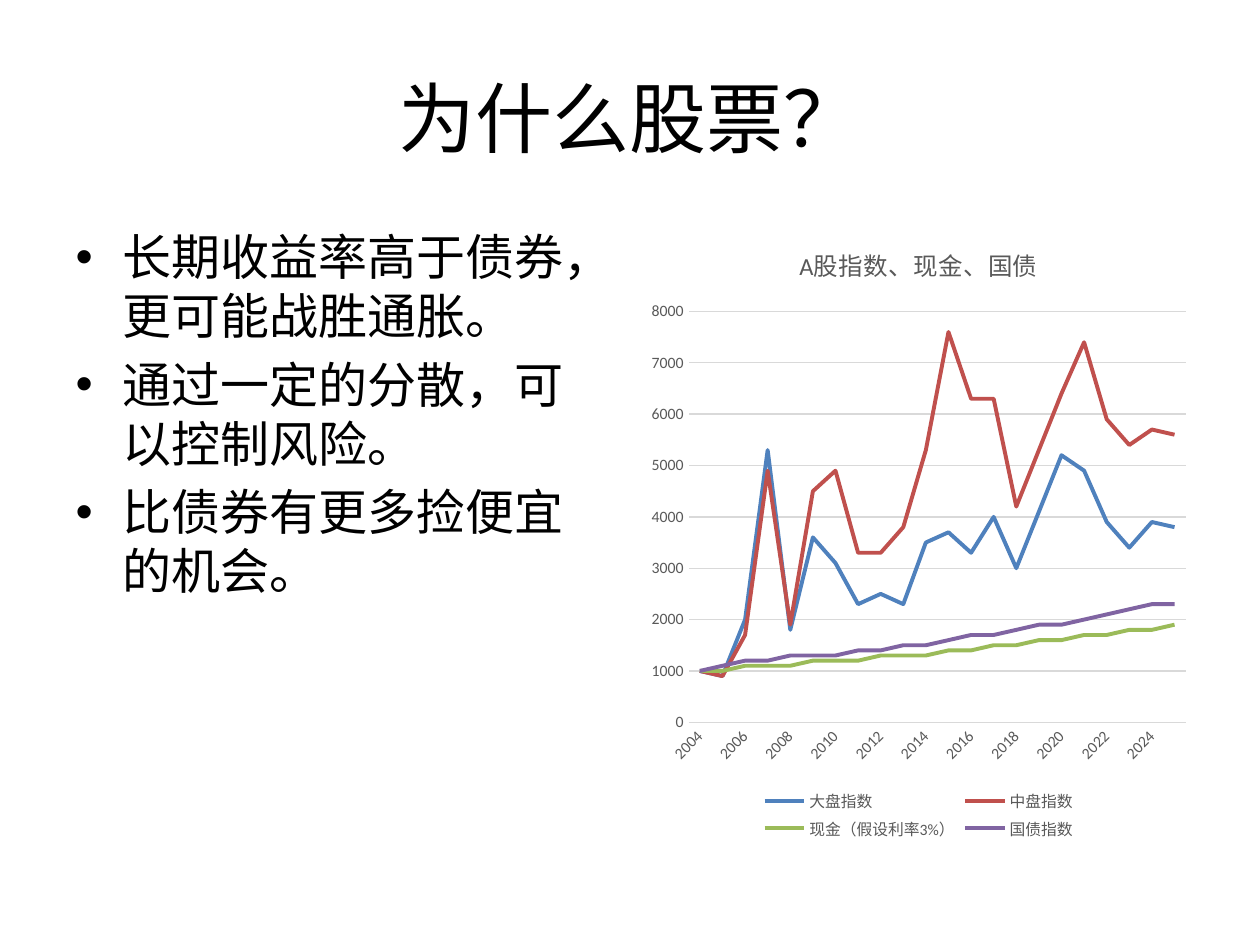
"""Build a slide on why to hold stocks, with a bullet list and an index chart."""
from lxml import etree
from pptx import Presentation
from pptx.chart.data import CategoryChartData
from pptx.dml.color import RGBColor
from pptx.enum.chart import XL_CHART_TYPE, XL_LEGEND_POSITION, XL_TICK_MARK
from pptx.enum.text import MSO_ANCHOR, PP_ALIGN
from pptx.oxml.ns import qn
from pptx.util import Pt

LINE_CHART = XL_CHART_TYPE.LINE
BOTTOM = XL_LEGEND_POSITION.BOTTOM
NO_TICK = XL_TICK_MARK.NONE
MIDDLE = MSO_ANCHOR.MIDDLE
CENTER = PP_ALIGN.CENTER

COLORS = {
    "text": "000000", "label": "595959", "grid": "D9D9D9",
    "blue": "4F81BD", "red": "C0504D", "green": "9BBB59", "purple": "8064A2",
}
POINTS = [
    "长期收益率高于债券，更可能战胜通胀。",
    "通过一定的分散，可以控制风险。",
    "比债券有更多捡便宜的机会。",
]
YEARS = [str(year) for year in range(2004, 2026)]
SERIES = [
    ("大盘指数", "blue",
     [1000, 900, 2000, 5300, 1800, 3600, 3100, 2300, 2500, 2300, 3500,
      3700, 3300, 4000, 3000, 4100, 5200, 4900, 3900, 3400, 3900, 3800]),
    ("中盘指数", "red",
     [1000, 900, 1700, 4900, 1900, 4500, 4900, 3300, 3300, 3800, 5300,
      7600, 6300, 6300, 4200, 5300, 6400, 7400, 5900, 5400, 5700, 5600]),
    ("现金（假设利率3%）", "green",
     [1000, 1000, 1100, 1100, 1100, 1200, 1200, 1200, 1300, 1300, 1300,
      1400, 1400, 1500, 1500, 1600, 1600, 1700, 1700, 1800, 1800, 1900]),
    ("国债指数", "purple",
     [1000, 1100, 1200, 1200, 1300, 1300, 1300, 1400, 1400, 1500, 1500,
      1600, 1700, 1700, 1800, 1900, 1900, 2000, 2100, 2200, 2300, 2300]),
]


class SlideBuilder:
    """Hold the style and the current page."""

    font_name = "Calibri"

    def __init__(self, page):
        self.page = page

    def style(self, font, size, color):
        font.name = self.font_name
        font.size = Pt(size)
        font.bold = False
        font.color.rgb = RGBColor.from_string(COLORS[color])

    def stroke(self, line, color, width):
        line.color.rgb = RGBColor.from_string(COLORS[color])
        line.width = Pt(width)

    def place(self, shape, bounds):
        shape.left, shape.top, shape.width, shape.height = map(Pt, bounds)

    def title(self, text, bounds):
        box = self.page.shapes.title
        self.place(box, bounds)
        box.text_frame.text = text
        box.text_frame.vertical_anchor = MIDDLE
        para = box.text_frame.paragraphs[0]
        para.alignment = CENTER
        self.style(para.font, 44, "text")

    def bullets(self, texts, bounds):
        box = self.page.placeholders[1]
        self.place(box, bounds)
        box.text_frame.text = "\n".join(texts)
        for para in box.text_frame.paragraphs:
            self.style(para.font, 28, "text")
        box.text_frame.paragraphs[0].space_before = Pt(0)

    def line_chart(self, title, categories, series, bounds):
        data = CategoryChartData(number_format="General")
        data.categories = categories
        for name, _, values in series:
            data.add_series(name, values)
        chart = self.page.shapes.add_chart(LINE_CHART, *map(Pt, bounds), data).chart
        self.style(chart.font, 10, "text")

        chart.has_title = True
        chart.chart_title.include_in_layout = False
        chart.chart_title.text_frame.text = title
        self.style(chart.chart_title.text_frame.paragraphs[0].font, 14, "label")

        chart.has_legend = True
        chart.legend.position = BOTTOM
        chart.legend.include_in_layout = False
        self.style(chart.legend.font, 9, "label")

        for plotted, (_, color, _) in zip(chart.plots[0].series, series):
            plotted.smooth = False
            self.stroke(plotted.format.line, color, 2.25)
        self.axes(chart)

    def axes(self, chart):
        years, values = chart.category_axis, chart.value_axis
        for axis in (years, values):
            axis.major_tick_mark = axis.minor_tick_mark = NO_TICK
            self.style(axis.tick_labels.font, 9, "label")
        self.stroke(years.format.line, "grid", 0.75)
        values.format.line.fill.background()
        values.minimum_scale, values.maximum_scale = 0, 8000
        values.major_unit = 1000
        values.has_major_gridlines = True
        self.stroke(values.major_gridlines.format.line, "grid", 0.75)

        element = years._element
        element.find(f"{qn('c:txPr')}/{qn('a:bodyPr')}").set("rot", "-2700000")
        skip = etree.Element(qn("c:tickLblSkip"), val="2")
        element.find(qn("c:noMultiLvlLbl")).addprevious(skip)


def main():
    deck = Presentation()
    deck.slide_width, deck.slide_height = Pt(720), Pt(540)
    builder = SlideBuilder(deck.slides.add_slide(deck.slide_layouts[1]))
    margin, top, width, height = 36, 126, 318, 356.4
    builder.title("为什么股票？", (margin, 21.6, 720 - 2 * margin, 90))
    builder.bullets(POINTS, (margin, top, width, height))
    builder.line_chart("A股指数、现金、国债", YEARS, SERIES,
                       (720 - margin - width, top, width, height))
    deck.save("out.pptx")


if __name__ == "__main__":
    main()
